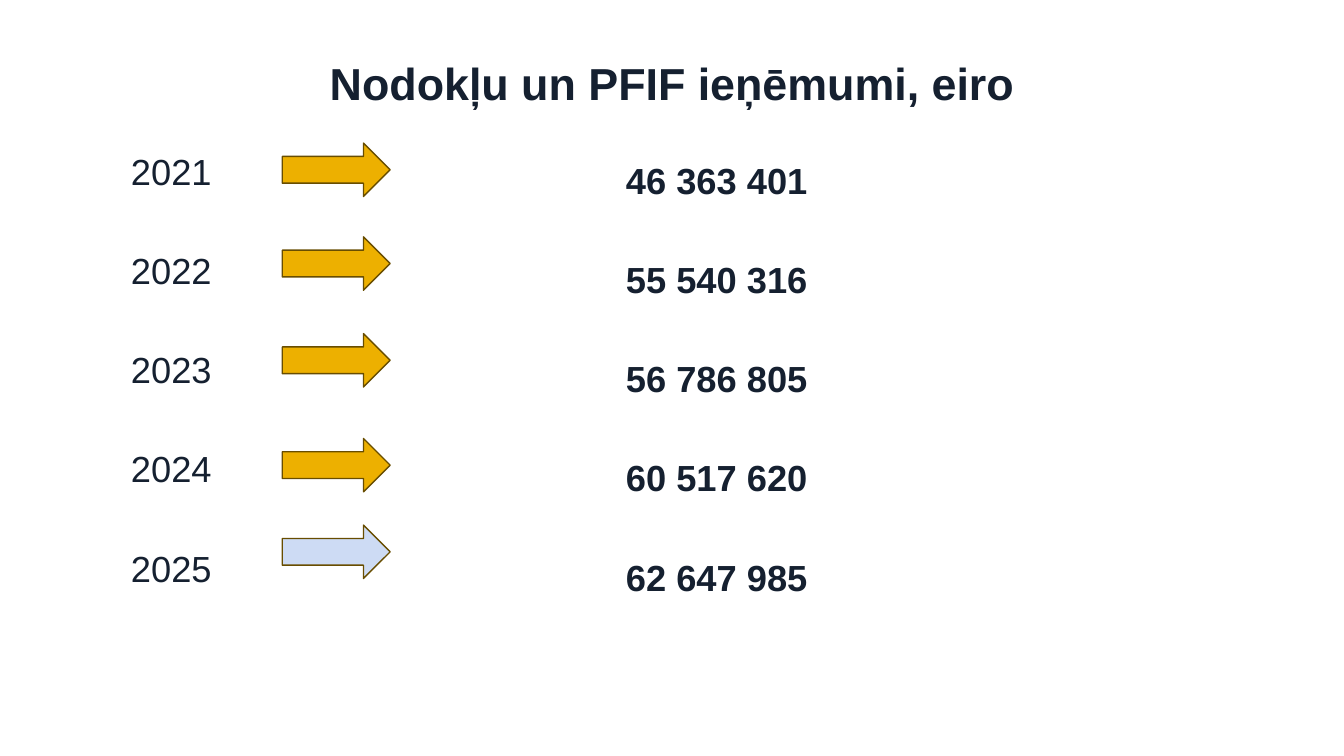
from pptx import Presentation
from pptx import util as u
from pptx.dml.color import RGBColor
from pptx.enum import shapes, text

COLORS = {"ink": "152030", "gold": "EDB000", "pale": "CDDBF4", "edge": "684D00"}
FONT = "Arial"


class Deck:
    def __init__(self):
        self.prs = Presentation()
        self.prs.slide_width = u.Inches(13.33)
        self.prs.slide_height = u.Inches(7.5)
        self.s = self.prs.slides.add_slide(self.prs.slide_layouts[5])

    def color(self, name):
        return RGBColor.from_string(COLORS[name])

    def run(self, p, words, size, bold):
        r = p.add_run()
        r.text = words
        r.font.name = FONT
        r.font.size = u.Pt(size)
        r.font.bold = bold
        r.font.color.rgb = self.color("ink")

    def title(self, words, x, y, w, h):
        sp = self.s.shapes.title
        sp.left, sp.top, sp.width, sp.height = map(u.Inches, (x, y, w, h))
        tf = sp.text_frame
        tf.vertical_anchor = text.MSO_ANCHOR.MIDDLE
        p = tf.paragraphs[0]
        p.alignment = text.PP_ALIGN.CENTER
        p.line_spacing = 0.9
        self.run(p, words, 32, True)

    def column(self, lines, x, y, w, h, bold=False):
        tf = self.s.shapes.add_textbox(*map(u.Inches, (x, y, w, h))).text_frame
        tf.word_wrap = True
        tf.margin_top = u.Inches(0.64)
        for i, line in enumerate(lines):
            p = tf.add_paragraph() if i else tf.paragraphs[0]
            p.line_spacing = 0.8
            if i:
                p.space_before = u.Pt(46)
            self.run(p, line, 25.9, bold)

    def arrow(self, x, y, w, h, fill):
        sp = self.s.shapes.add_shape(shapes.MSO_SHAPE.RIGHT_ARROW,
                                     *map(u.Inches, (x, y, w, h)))
        sp.shadow.inherit = False
        sp.fill.solid()
        sp.fill.fore_color.rgb = self.color(fill)
        sp.line.color.rgb = self.color("edge")
        sp.line.width = u.Pt(1)


def main():
    deck = Deck()
    deck.title("Nodokļu un PFIF ieņēmumi, eiro", 0.92, 0.4, 11.5, 0.9)

    # Year, revenue and arrow top; the latest year has a pale arrow
    rows = [("2021", "46 363 401", 1.42),
            ("2022", "55 540 316", 2.35),
            ("2023", "56 786 805", 3.31),
            ("2024", "60 517 620", 4.35),
            ("2025", "62 647 985", 5.21)]
    years, revenues, tops = zip(*rows)

    # Text columns
    deck.column(years, 1.2, 0.92, 3.21, 5.46)
    deck.column(revenues, 6.11, 1.01, 3.8, 5.07, bold=True)

    # Arrows
    for year, top in zip(years, tops):
        deck.arrow(2.8, top, 1.07, 0.53, "pale" if year == years[-1] else "gold")

    deck.prs.save("out.pptx")


if __name__ == "__main__":
    main()
